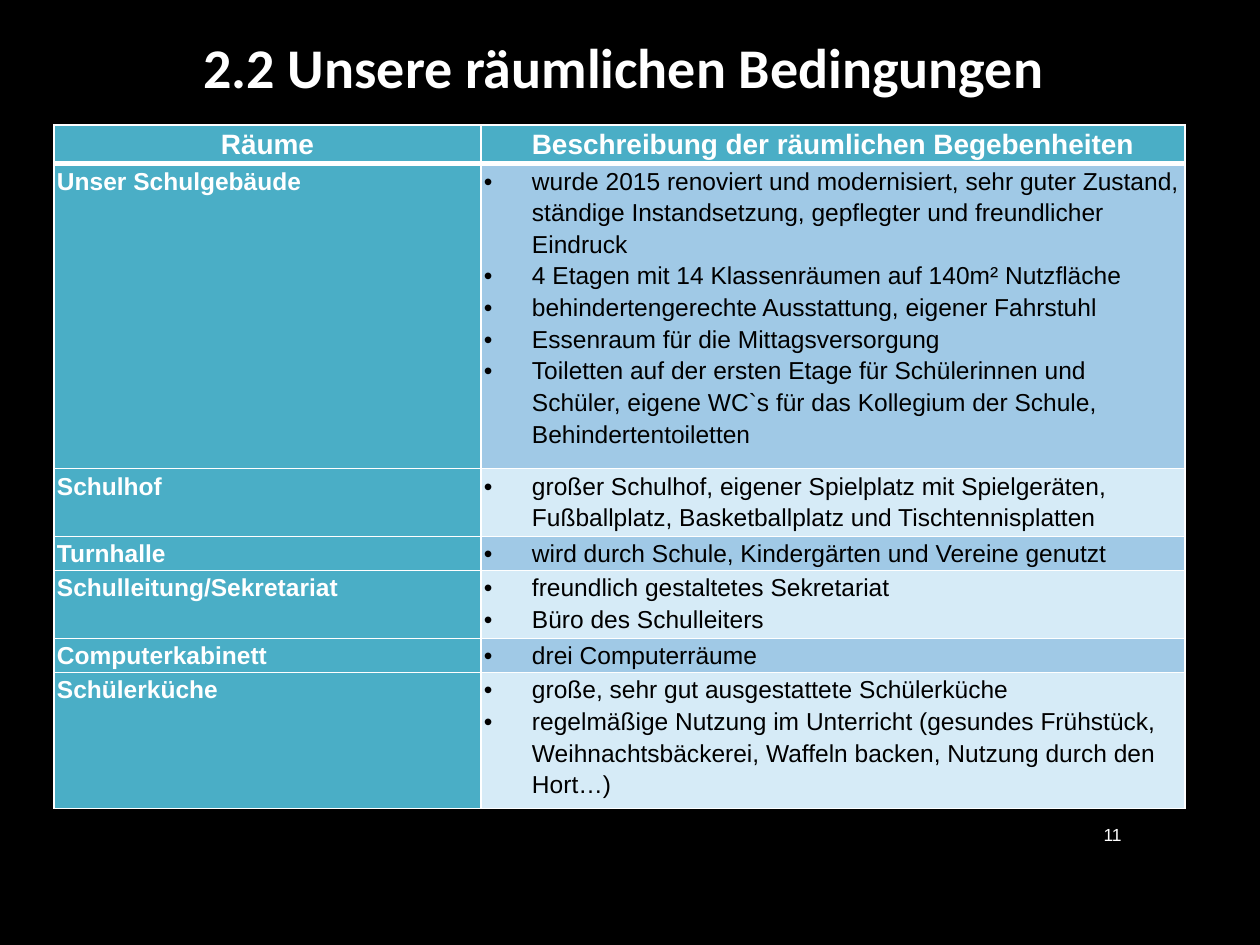
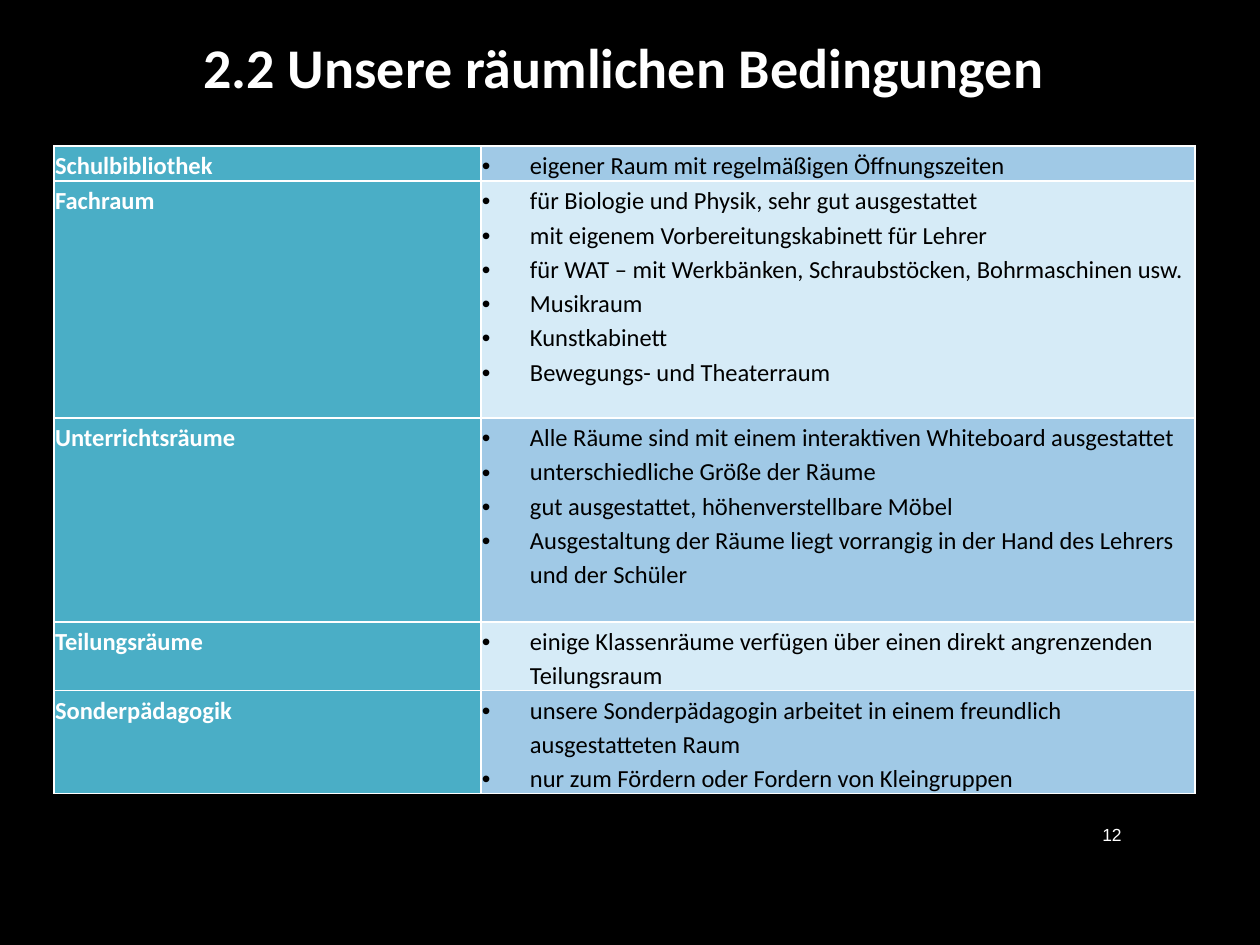
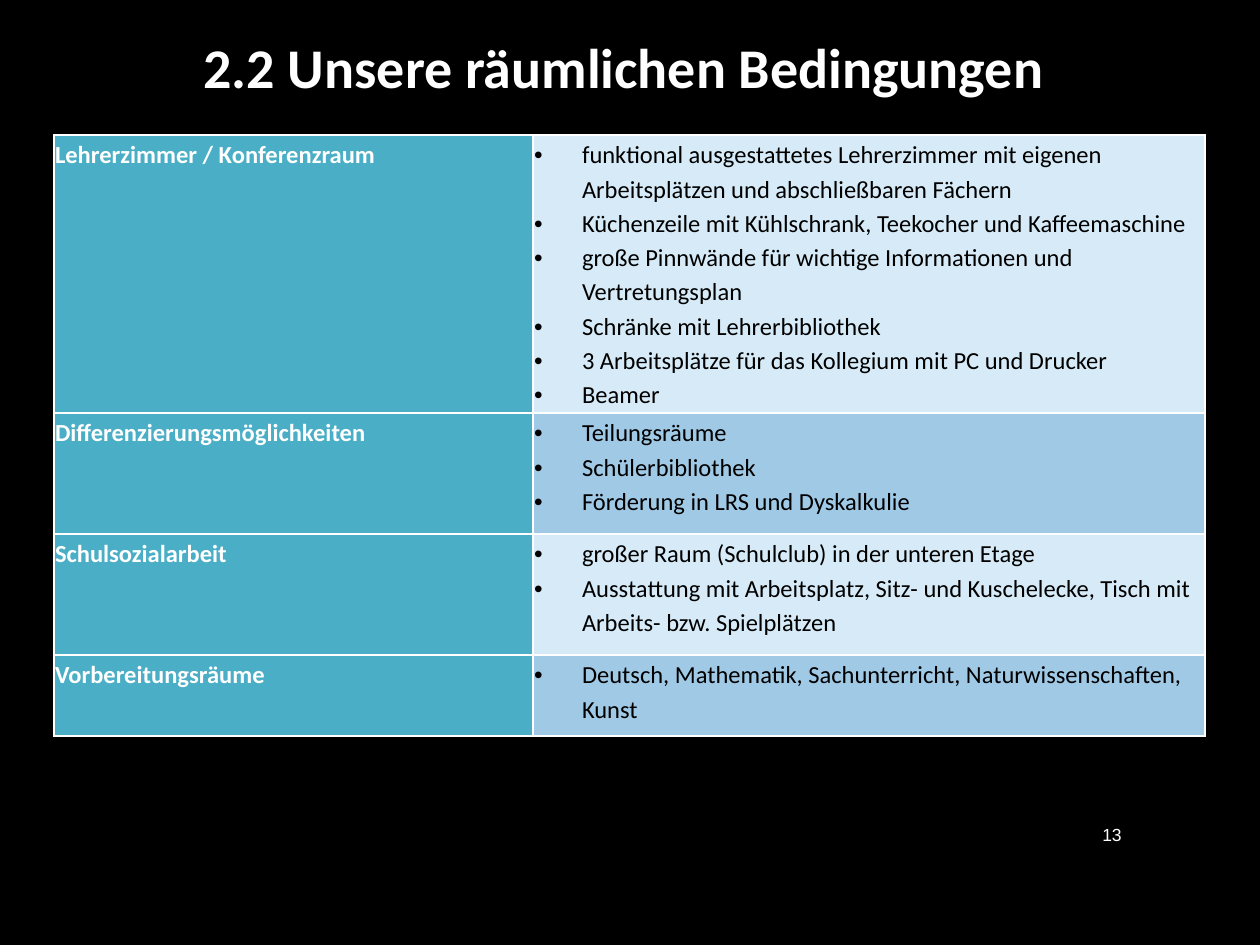
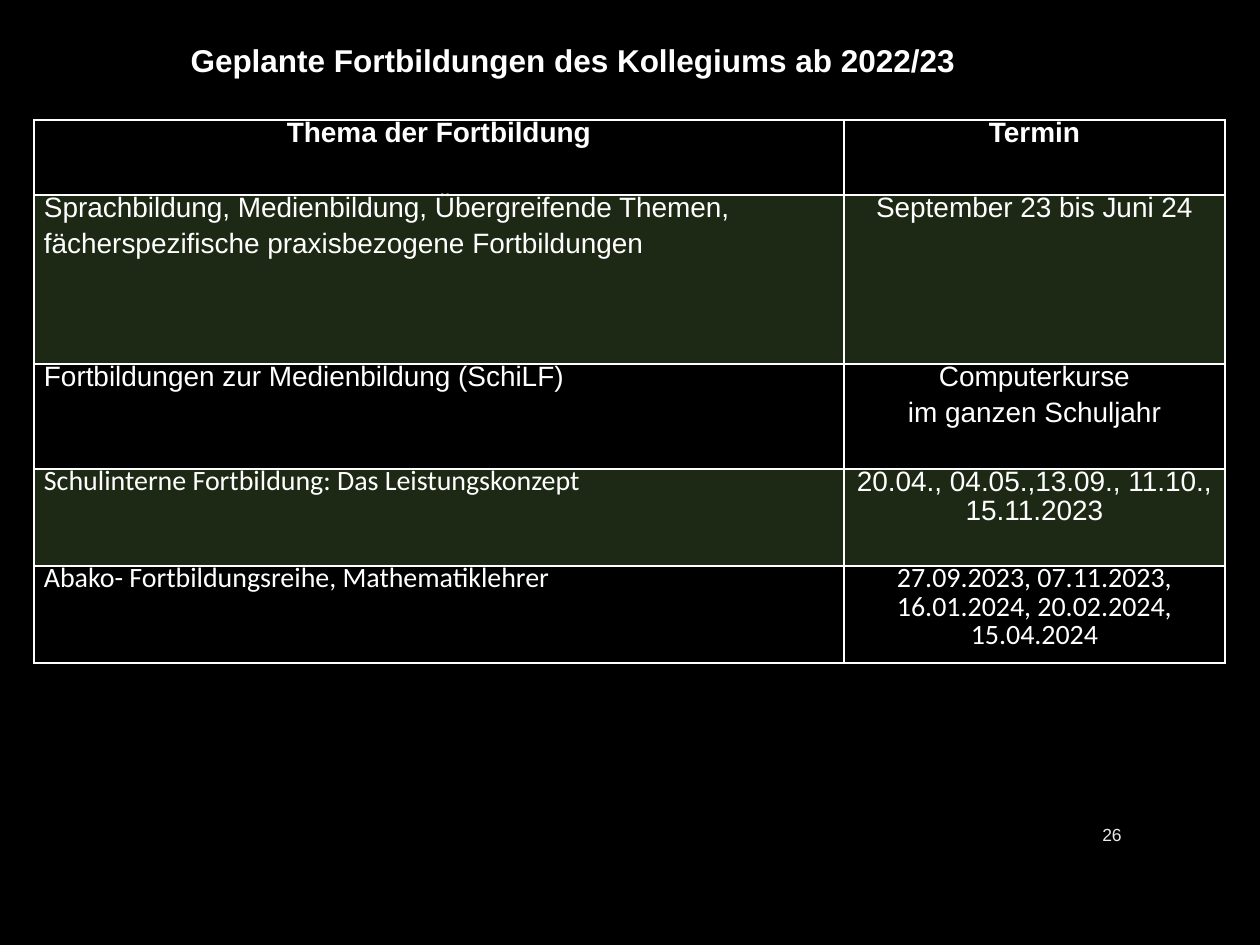
from lxml.etree import SubElement
from pptx import Presentation
from pptx.dml.color import RGBColor
from pptx.enum.text import MSO_ANCHOR, MSO_AUTO_SIZE, PP_ALIGN
from pptx.oxml.ns import qn
from pptx.util import Emu, Pt

PIXELS_PER_INCH = 126
COLORS = {
    "background": "000000",
    "white": "FFFFFF",
    "pale": "EBEBEB",
    "black": "000000",
    "label": "4AAEC6",
    "medium": "A0C9E6",
    "light": "D6EBF7",
    "green": "94CE67",
}
ROOMS_TITLE = "2.2 Unsere räumlichen Bedingungen"
BULLET_INDENT = 48

BUILDING_ROOMS = [
    ("Unser Schulgebäude", 305, [
        "wurde 2015 renoviert und modernisiert, sehr guter Zustand, ständige Instandsetzung, "
        "gepflegter und freundlicher Eindruck",
        "4 Etagen mit 14 Klassenräumen auf 140m² Nutzfläche",
        "behindertengerechte Ausstattung, eigener Fahrstuhl",
        "Essenraum für die Mittagsversorgung",
        "Toiletten auf der ersten Etage für Schülerinnen und Schüler, eigene WC`s für das "
        "Kollegium der Schule, Behindertentoiletten",
    ]),
    ("Schulhof", 68, [
        "großer Schulhof, eigener Spielplatz mit Spielgeräten, Fußballplatz, Basketballplatz "
        "und Tischtennisplatten",
    ]),
    ("Turnhalle", 34, ["wird durch Schule, Kindergärten und Vereine genutzt"]),
    ("Schulleitung/Sekretariat", 68, [
        "freundlich gestaltetes Sekretariat",
        "Büro des Schulleiters",
    ]),
    ("Computerkabinett", 34, ["drei Computerräume"]),
    ("Schülerküche", 136, [
        "große, sehr gut ausgestattete Schülerküche",
        "regelmäßige Nutzung im Unterricht (gesundes Frühstück, Weihnachtsbäckerei, "
        "Waffeln backen, Nutzung durch den Hort…)",
    ]),
]
TEACHING_ROOMS = [
    ("Schulbibliothek", 35, ["eigener Raum mit regelmäßigen Öffnungszeiten"]),
    ("Fachraum", 237, [
        "für Biologie und Physik, sehr gut ausgestattet",
        "mit eigenem Vorbereitungskabinett für Lehrer",
        "für WAT – mit Werkbänken, Schraubstöcken, Bohrmaschinen usw.",
        "Musikraum",
        "Kunstkabinett",
        "Bewegungs- und Theaterraum",
    ]),
    ("Unterrichtsräume", 204, [
        "Alle Räume sind mit einem interaktiven Whiteboard ausgestattet",
        "unterschiedliche Größe der Räume",
        "gut ausgestattet, höhenverstellbare Möbel",
        "Ausgestaltung der Räume liegt vorrangig in der Hand des Lehrers und der Schüler",
    ]),
    ("Teilungsräume", 68, [
        "einige Klassenräume verfügen über einen direkt angrenzenden Teilungsraum",
    ]),
    ("Sonderpädagogik", 103, [
        "unsere Sonderpädagogin arbeitet in einem freundlich ausgestatteten Raum",
        "nur zum Fördern oder Fordern von Kleingruppen",
    ]),
]
STAFF_ROOMS = [
    ("Lehrerzimmer / Konferenzraum", 278, [
        "funktional ausgestattetes Lehrerzimmer mit eigenen Arbeitsplätzen und "
        "abschließbaren Fächern",
        "Küchenzeile mit Kühlschrank, Teekocher und Kaffeemaschine",
        "große Pinnwände für wichtige Informationen und Vertretungsplan",
        "Schränke mit Lehrerbibliothek",
        "3 Arbeitsplätze für das Kollegium mit PC und Drucker",
        "Beamer",
    ]),
    ("Differenzierungsmöglichkeiten", 121, [
        "Teilungsräume",
        "Schülerbibliothek",
        "Förderung in LRS und Dyskalkulie",
    ]),
    ("Schulsozialarbeit", 121, [
        "großer Raum (Schulclub) in der unteren Etage",
        "Ausstattung mit Arbeitsplatz, Sitz- und Kuschelecke, Tisch mit Arbeits- bzw. "
        "Spielplätzen",
    ]),
    ("Vorbereitungsräume", 81, [
        "Deutsch, Mathematik, Sachunterricht, Naturwissenschaften, Kunst",
    ]),
]
TRAININGS = [
    (169, ["Sprachbildung, Medienbildung, Übergreifende Themen,",
           "fächerspezifische praxisbezogene Fortbildungen"],
     ["September 23 bis Juni 24"], PP_ALIGN.LEFT, "Arial", "Arial"),
    (105, ["Fortbildungen zur Medienbildung (SchiLF)"],
     ["Computerkurse", "im ganzen Schuljahr"], PP_ALIGN.JUSTIFY, "Arial", "Arial"),
    (97, ["Schulinterne Fortbildung: Das Leistungskonzept"],
     ["20.04., 04.05.,13.09., 11.10., 15.11.2023"], PP_ALIGN.JUSTIFY, "Calibri", "Arial"),
    (97, ["Abako- Fortbildungsreihe, Mathematiklehrer"],
     ["27.09.2023, 07.11.2023, 16.01.2024, 20.02.2024, 15.04.2024"],
     PP_ALIGN.JUSTIFY, "Calibri", "Calibri"),
]


def px(length):
    return Emu(round(length * 914400 / PIXELS_PER_INCH))


def rgb(name):
    return RGBColor.from_string(COLORS[name])


def add_bullet(paragraph):
    properties = paragraph._p.get_or_add_pPr()
    properties.set("marL", str(px(BULLET_INDENT)))
    properties.set("indent", str(-px(BULLET_INDENT)))
    SubElement(properties, qn("a:buFont"), typeface="Arial")
    SubElement(properties, qn("a:buChar"), char="•")


def write_text(frame, lines, size=14, font="Arial", color="white", bold=False,
               align=PP_ALIGN.LEFT, spacing=None, after=None, bullet=False):
    for index, line in enumerate(lines):
        paragraph = frame.paragraphs[0] if index == 0 else frame.add_paragraph()
        if bullet:
            add_bullet(paragraph)
        paragraph.alignment = align
        if spacing:
            paragraph.line_spacing = spacing
        if after:
            paragraph.space_after = Pt(after)
        run = paragraph.add_run()
        run.text = line
        run.font.size = Pt(size)
        run.font.name = font
        run.font.bold = bold
        run.font.color.rgb = rgb(color)


def set_borders(cell, top=1, bottom=1):
    properties = cell._tc.get_or_add_tcPr()
    for side, width in (("L", 1), ("R", 1), ("T", top), ("B", bottom)):
        line = SubElement(properties, qn(f"a:ln{side}"), w=str(Pt(width)))
        fill = SubElement(line, qn("a:solidFill"))
        SubElement(fill, qn("a:srgbClr"), val=COLORS["white"])


def format_cell(cell, lines, fill=None, opacity=None, margins=(0, 0), top=1, bottom=1,
                **text_format):
    side_margin, top_margin = margins
    cell.margin_left = cell.margin_right = px(side_margin)
    cell.margin_top = px(top_margin)
    cell.margin_bottom = 0
    set_borders(cell, top, bottom)
    if fill:
        cell.fill.solid()
        cell.fill.fore_color.rgb = rgb(fill)
    else:
        cell.fill.background()
    if opacity:
        color = cell._tc.tcPr.find(qn("a:solidFill")).find(qn("a:srgbClr"))
        SubElement(color, qn("a:alpha"), val=str(opacity * 1000))
    write_text(cell.text_frame, lines, **text_format)


def add_table(slide, left, top, widths, heights):
    frame = slide.shapes.add_table(len(heights), len(widths), px(left), px(top),
                                   px(sum(widths)), px(sum(heights)))
    table = frame.table
    table.first_row = table.horz_banding = False
    for column, width in zip(table.columns, widths):
        column.width = px(width)
    for row, height in zip(table.rows, heights):
        row.height = px(height)
    return table


def add_slide(presentation, title, number, box=(42, 26, 1164, 81), anchor=MSO_ANCHOR.MIDDLE,
              number_color="white", **title_format):
    slide = presentation.slides.add_slide(presentation.slide_layouts[5])
    shape = slide.shapes.title
    shape.left, shape.top, shape.width, shape.height = map(px, box)
    frame = shape.text_frame
    frame.word_wrap = True
    frame.auto_size = MSO_AUTO_SIZE.SHAPE_TO_FIT_TEXT
    frame.vertical_anchor = anchor
    write_text(frame, [title], bold=True, **title_format)

    number_box = slide.shapes.add_textbox(px(1076), px(809), px(58), px(52))
    number_box.text_frame.word_wrap = True
    number_box.text_frame.vertical_anchor = MSO_ANCHOR.MIDDLE
    write_text(number_box.text_frame, [str(number)], size=10, color=number_color,
               align=PP_ALIGN.RIGHT)
    return slide


def add_rooms_slide(presentation, number, rooms, top, widths, shades=("medium", "light"),
                    font="Calibri", margins=(1, 1), headings=None):
    slide = add_slide(presentation, ROOMS_TITLE, number, size=32, font="Calibri",
                      align=PP_ALIGN.CENTER)
    heights = [height for _, height, _ in rooms]
    first_row = 1 if headings else 0
    table = add_table(slide, 54, top, widths, [38] * first_row + heights)
    shared = {"font": font, "margins": margins, "spacing": 1.15}
    for column, heading in enumerate(headings or []):
        format_cell(table.cell(0, column), [heading], fill="label", bottom=3, size=16,
                    bold=True, align=PP_ALIGN.CENTER, **shared)
    for index, (label, _, bullets) in enumerate(rooms):
        row = index + first_row
        top_border = 3 if headings and index == 0 else 1
        format_cell(table.cell(row, 0), [label], fill="label", top=top_border, bold=True,
                    **shared)
        format_cell(table.cell(row, 1), bullets, fill=shades[index % 2], top=top_border,
                    color="black", bullet=True, **shared)


def add_training_slide(presentation, number):
    slide = add_slide(presentation, "Geplante Fortbildungen des Kollegiums ab 2022/23", number,
                      box=(178, 35, 903, 89), anchor=MSO_ANCHOR.TOP, number_color="pale",
                      size=18)
    heights = [75] + [training[0] for training in TRAININGS]
    table = add_table(slide, 34, 120, (810, 381), heights)
    shared = {"margins": (10, 0), "size": 16, "spacing": Pt(16.5), "after": 3.8}
    for column, heading in enumerate(("Thema der Fortbildung", "Termin")):
        format_cell(table.cell(0, column), [heading], bold=True, align=PP_ALIGN.CENTER, **shared)
    for row, training in enumerate(TRAININGS, start=1):
        _, topic, dates, topic_align, topic_font, date_font = training
        band = {"fill": "green", "opacity": 20} if row % 2 else {}
        format_cell(table.cell(row, 0), topic, font=topic_font, align=topic_align,
                    **band, **shared)
        format_cell(table.cell(row, 1), dates, font=date_font, align=PP_ALIGN.CENTER,
                    **band, **shared)


def main():
    presentation = Presentation()
    presentation.slide_width, presentation.slide_height = px(1260), px(945)
    background = presentation.slide_master.background.fill
    background.solid()
    background.fore_color.rgb = rgb("background")

    add_rooms_slide(presentation, 11, BUILDING_ROOMS, 125, (427, 704), font="Arial",
                    margins=(3, 0),
                    headings=("Räume", "Beschreibung der räumlichen Begebenheiten"))
    add_rooms_slide(presentation, 12, TEACHING_ROOMS, 146, (427, 714))
    add_rooms_slide(presentation, 13, STAFF_ROOMS, 135, (479, 672), shades=("light", "medium"))
    add_training_slide(presentation, 26)
    presentation.save("out.pptx")


if __name__ == "__main__":
    main()
